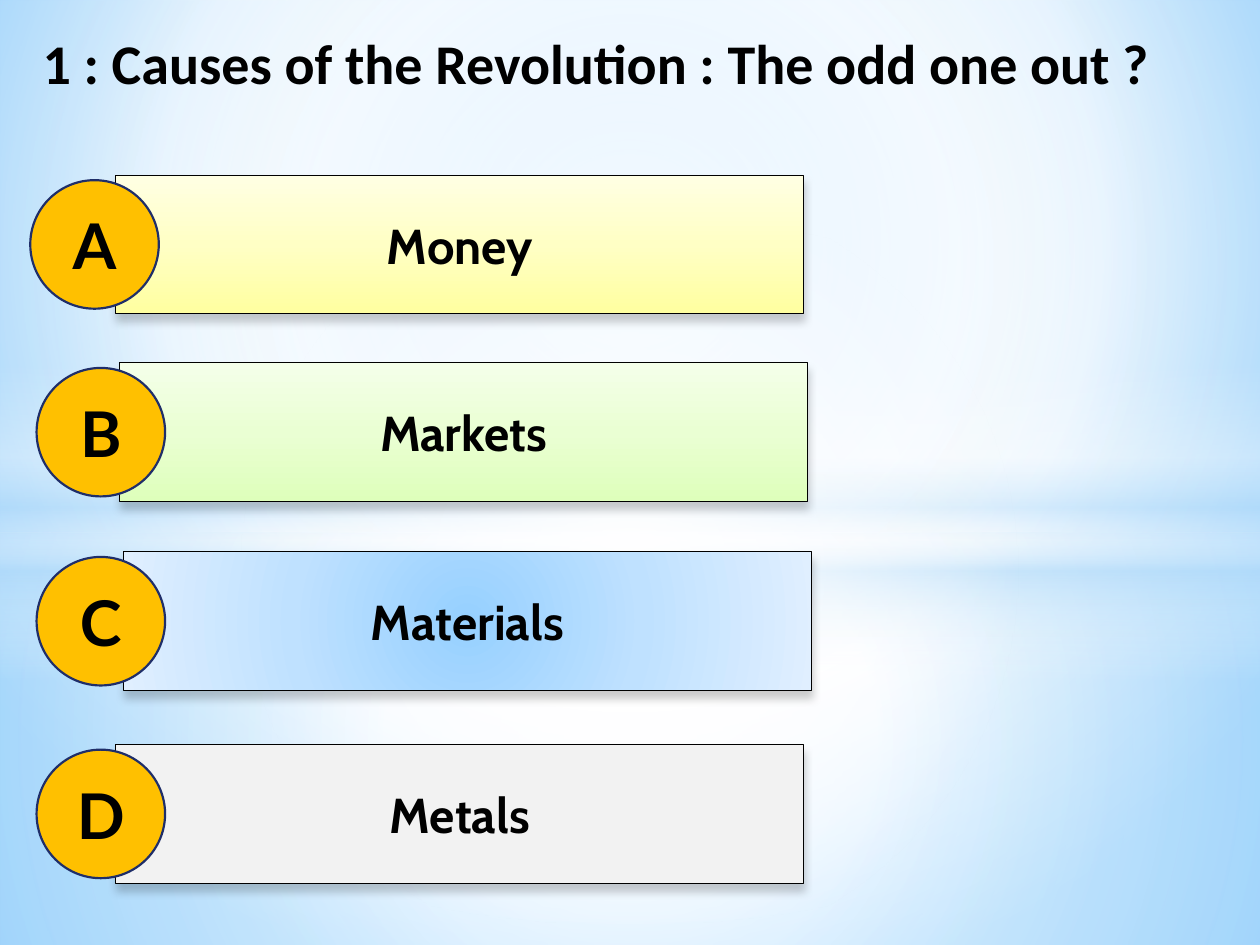
import dataclasses
import typing

import lxml.etree
import pptx
import pptx.dml.color
import pptx.enum.shapes
import pptx.enum.text
import pptx.oxml.ns
import pptx.util

MSO_SHAPE = pptx.enum.shapes.MSO_SHAPE
COLORS = {
    "black": "000000", "white": "FFFFFF", "sky": "B4DCFA",
    "sky_core": "9ED5FF", "sky_rim": "5BB9FF",
    "gold": "FFC000", "navy": "1F2E69", "gray": "F2F2F2",
    "yellow": "FFFFA0", "yellow_mid": "FFFFC5", "yellow_pale": "FFFFE3",
    "green": "DEFFBB", "green_mid": "EAFFD3", "green_pale": "F4FFE9",
    "blue": "96D0FF", "blue_mid": "BFE1FF", "blue_pale": "E0EFFF",
}
UNIT = pptx.util.Inches(0.1)
COLUMNS, ROWS = 100, 75
BAR_WIDTH, BAR_HEIGHT, BADGE_SIZE = 54.6, 11, 10.2
CENTER = (50, 50, 50, 50)


class Stop(typing.NamedTuple):
    position: int
    color: str
    opacity: int = 100


@dataclasses.dataclass(frozen=True)
class Gradient:
    stops: tuple[Stop, ...]
    angle: int | None = None
    focus: tuple[int, int, int, int] = CENTER


@dataclasses.dataclass(frozen=True)
class Box:
    left: float
    top: float
    width: float
    height: float

    def emu(self) -> list[int]:
        return [round(n * UNIT) for n in (self.left, self.top, self.width, self.height)]


@dataclasses.dataclass(frozen=True)
class Glow:
    box: Box
    gradient: Gradient
    outline: int = MSO_SHAPE.RECTANGLE


@dataclasses.dataclass(frozen=True)
class Answer:
    letter: str
    wording: str
    top: float
    bar_left: float
    badge_left: float
    fill: Gradient | str


def veil(middle: int, opacities: tuple[int, int, int]) -> Gradient:
    marks = zip((0, middle, 100), ("white", "white", "sky"), opacities)
    return Gradient(tuple(Stop(*mark) for mark in marks))


def tint(color: str, angle: int | None = None) -> Gradient:
    return Gradient((Stop(0, color), Stop(50, f"{color}_mid"), Stop(100, f"{color}_pale")), angle)


BACKDROP = Gradient(
    (Stop(0, "sky_core"), Stop(60, "white"), Stop(100, "sky_rim")), focus=(20, 10, 20, 60))
GLOWS = [
    Glow(Box(0, 42.3, COLUMNS, ROWS - 42.3), veil(37, (91, 76, 79))),
    Glow(Box(0, 0, COLUMNS, 42.3), veil(48, (89, 62, 79))),
    Glow(Box(0, 29, COLUMNS, 25), Gradient((
        Stop(0, "white", 0), Stop(29, "white", 30), Stop(45, "sky", 40),
        Stop(55, "white", 26), Stop(65, "sky", 60), Stop(100, "white", 0)), 90)),
    Glow(Box(0, 17.5, COLUMNS, 55.8),
         Gradient((Stop(0, "white"), Stop(54, "white", 0))), MSO_SHAPE.OVAL),
]
ANSWERS = [
    Answer("A", "Money", 13.9, 9.2, 2.4, tint("yellow", 270)),
    Answer("B", "Markets", 28.8, 9.5, 2.9, tint("green", 270)),
    Answer("C", "Materials", 43.8, 9.8, 2.9, tint("blue")),
    Answer("D", "Metals", 59.1, 9.2, 2.9, "gray"),
]


def rgb(color: str) -> pptx.dml.color.RGBColor:
    return pptx.dml.color.RGBColor.from_string(COLORS[color])


def add_node(parent, tag: str, **attributes):
    node = lxml.etree.SubElement(parent, pptx.oxml.ns.qn(tag))
    for name, value in attributes.items():
        node.set(name, str(value))
    return node


def add_color(parent, color: str, opacity: int) -> None:
    node = add_node(parent, "a:srgbClr", val=COLORS[color])
    if opacity < 100:
        add_node(node, "a:alpha", val=opacity * 1000)


def paint(fill, properties, paint_with: Gradient | str) -> None:
    fill.solid()
    if isinstance(paint_with, str):
        fill.fore_color.rgb = rgb(paint_with)
        return
    solid = properties.find(pptx.oxml.ns.qn("a:solidFill"))
    blend = lxml.etree.Element(pptx.oxml.ns.qn("a:gradFill"), rotWithShape="1")
    stops = add_node(blend, "a:gsLst")
    for stop in paint_with.stops:
        add_color(add_node(stops, "a:gs", pos=stop.position * 1000), stop.color, stop.opacity)
    if paint_with.angle is not None:
        add_node(blend, "a:lin", ang=paint_with.angle * 60000, scaled=0)
    else:
        circle = add_node(blend, "a:path", path="circle")
        sides = zip("ltrb", paint_with.focus)
        add_node(circle, "a:fillToRect", **{side: share * 1000 for side, share in sides})
    properties.replace(solid, blend)


def add_figure(slide, outline: int, box: Box, fill: Gradient | str,
               line: tuple[str, float] | None = None):
    figure = slide.shapes.add_shape(outline, *box.emu())
    figure.shadow.inherit = False
    paint(figure.fill, figure.element.spPr, fill)
    if line is None:
        figure.line.fill.background()
    else:
        figure.line.color.rgb = rgb(line[0])
        figure.line.width = pptx.util.Pt(line[1])
    return figure


def write(figure, wording: str, size: int, font_name: str, centered: bool = True) -> None:
    frame = figure.text_frame
    frame.word_wrap = True
    frame.text = wording
    paragraph = frame.paragraphs[0]
    if centered:
        frame.vertical_anchor = pptx.enum.text.MSO_ANCHOR.MIDDLE
        paragraph.alignment = pptx.enum.text.PP_ALIGN.CENTER
    font = paragraph.runs[0].font
    font.name, font.size, font.bold = font_name, pptx.util.Pt(size), True
    font.color.rgb = rgb("black")


def drop_shadow(figure) -> None:
    effects = figure.element.spPr.find(pptx.oxml.ns.qn("a:effectLst"))
    shadow = add_node(effects, "a:outerShdw", blurRad=pptx.util.Pt(5), dist=pptx.util.Pt(4),
                      dir=90 * 60000, rotWithShape=0)
    add_color(shadow, "black", 20)


def add_bar(slide, answer: Answer) -> None:
    box = Box(answer.bar_left, answer.top, BAR_WIDTH, BAR_HEIGHT)
    bar = add_figure(slide, MSO_SHAPE.RECTANGLE, box, answer.fill, ("black", 0.5))
    drop_shadow(bar)
    write(bar, answer.wording, 28, "Cabin")


def add_badge(slide, answer: Answer) -> None:
    top = answer.top + (BAR_HEIGHT - BADGE_SIZE) / 2
    box = Box(answer.badge_left, top, BADGE_SIZE, BADGE_SIZE)
    badge = add_figure(slide, MSO_SHAPE.OVAL, box, "gold", ("navy", 1.25))
    write(badge, answer.letter, 36, "Lato")


def main() -> None:
    deck = pptx.Presentation()
    deck.slide_width, deck.slide_height = COLUMNS * UNIT, ROWS * UNIT
    slide = deck.slides.add_slide(deck.slide_layouts[6])
    backdrop = slide.background.fill
    backdrop.solid()
    paint(backdrop, next(slide.element.iter(pptx.oxml.ns.qn("p:bgPr"))), BACKDROP)
    for glow in GLOWS:
        add_figure(slide, glow.outline, glow.box, glow.gradient)
    question = slide.shapes.add_textbox(*Box(2.4, 1.8, 97.9, 6.4).emu())
    write(question, "1 : Causes of the Revolution : The odd one out ?", 32, "Calibri", False)
    question.text_frame.auto_size = pptx.enum.text.MSO_AUTO_SIZE.SHAPE_TO_FIT_TEXT
    for answer in ANSWERS:
        add_bar(slide, answer)
    for answer in ANSWERS:
        add_badge(slide, answer)
    deck.save("out.pptx")


if __name__ == "__main__":
    main()
